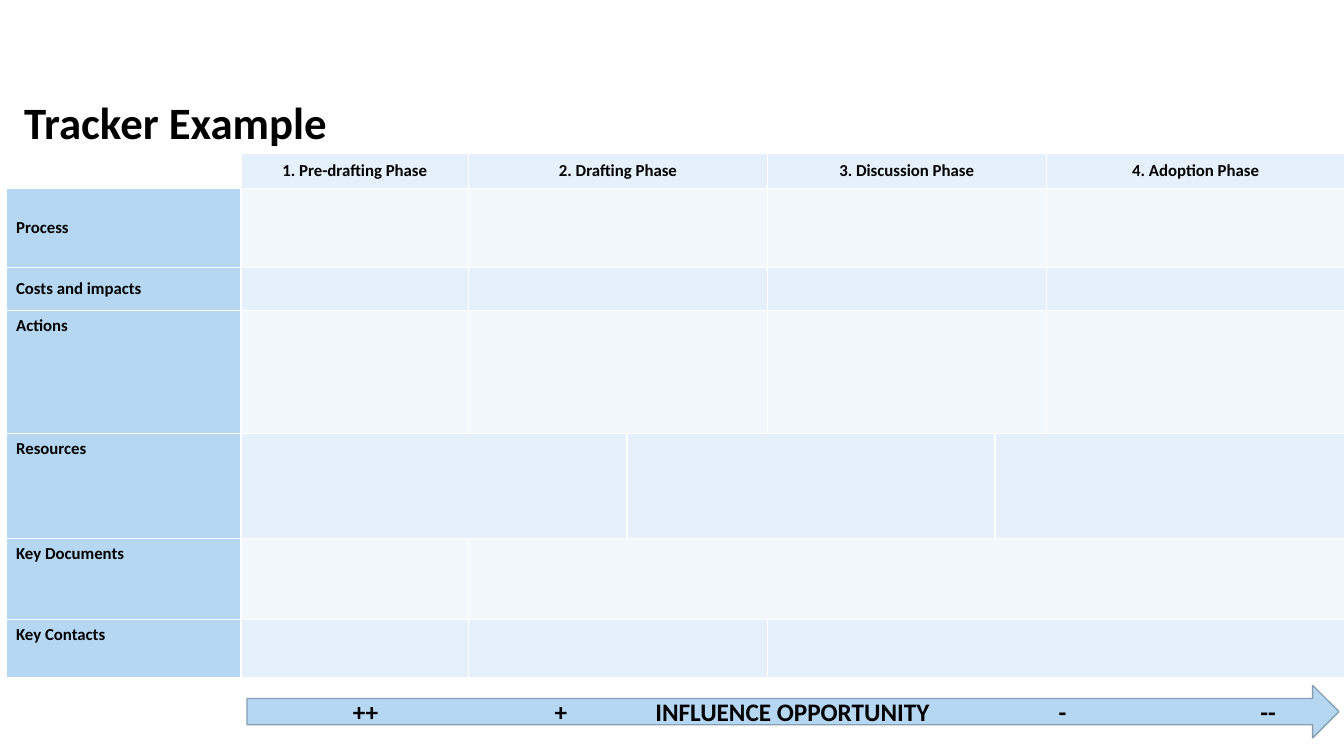
"""Build a tracker slide: a table of phases above an influence arrow."""
from lxml import etree
from pptx import Presentation
from pptx.dml.color import RGBColor
from pptx.enum.shapes import MSO_SHAPE
from pptx.enum.text import MSO_ANCHOR, MSO_AUTO_SIZE, PP_ALIGN
from pptx.oxml.ns import qn
from pptx.util import Inches, Pt

ARROW = MSO_SHAPE.RIGHT_ARROW
TOP, MIDDLE = MSO_ANCHOR.TOP, MSO_ANCHOR.MIDDLE
LEFT, CENTER = PP_ALIGN.LEFT, PP_ALIGN.CENTER
NO_FIT = MSO_AUTO_SIZE.NONE

COLORS = {
    "text": "000000",
    "border": "FFFFFF",
    "corner": "FFFFFF",
    "label": "B5D7F2",
    "dark band": "E5F0FA",
    "light band": "F3F8FC",
    "arrow edge": "869FB3",
}
COLUMN_WIDTHS = [2.33, 2.26, 1.57, 1.39, 2.26, 0.51, 2.96]
PHASE_SPANS = [(1, 1), (2, 3), (4, 5), (6, 6)]
PHASES = ["1. Pre-drafting Phase", "2. Drafting Phase",
          "3. Discussion Phase", "4. Adoption Phase"]
TRACKER_ROWS = [
    ("", 0.35, MIDDLE, PHASE_SPANS),
    ("Process", 0.78, MIDDLE, PHASE_SPANS),
    ("Costs and impacts", 0.43, MIDDLE, PHASE_SPANS),
    ("Actions", 1.22, TOP, PHASE_SPANS),
    ("Resources", 1.04, TOP, [(1, 2), (3, 4), (5, 6)]),
    ("Key Documents", 0.81, TOP, [(1, 1), (2, 6)]),
    ("Key Contacts", 0.57, TOP, [(1, 1), (2, 3), (4, 6)]),
]
INFLUENCE_LEVELS = {1: "++", 3: "+", 4: "INFLUENCE OPPORTUNITY", 8: "-", 10: "--"}


def color(name):
    return RGBColor.from_string(COLORS[name])


def format_text(paragraph, size):
    for run in paragraph.runs:
        run.font.name = "Calibri"
        run.font.size = Pt(size)
        run.font.bold = True
        run.font.color.rgb = color("text")


prs = Presentation()
prs.slide_width, prs.slide_height = Inches(13.33), Inches(7.5)
slide = prs.slides.add_slide(prs.slide_layouts[5])

tracker_frame = slide.shapes.add_table(
    len(TRACKER_ROWS), len(COLUMN_WIDTHS), Inches(0.06), Inches(1.52),
    Inches(sum(COLUMN_WIDTHS)), Inches(sum(row[1] for row in TRACKER_ROWS)))
tracker = tracker_frame.table
tracker.first_row = tracker.horz_banding = False
for column, width in zip(tracker.columns, COLUMN_WIDTHS):
    column.width = Inches(width)

for row, (label, height, anchor, spans) in enumerate(TRACKER_ROWS):
    tracker.rows[row].height = Inches(height)
    band = "light band" if row % 2 else "dark band"
    for col in range(len(COLUMN_WIDTHS)):
        cell = tracker.cell(row, col)
        cell.vertical_anchor = anchor
        for side in ("lnL", "lnR", "lnT", "lnB"):
            border = etree.SubElement(cell._tc.get_or_add_tcPr(), qn("a:" + side), w=str(Pt(1)))
            border_fill = etree.SubElement(border, qn("a:solidFill"))
            etree.SubElement(border_fill, qn("a:srgbClr"), val=COLORS["border"])
        cell.fill.solid()
        cell.fill.fore_color.rgb = color(band if col else "label" if row else "corner")
        entry = cell.text_frame.paragraphs[0]
        if col == 0 and label:
            entry.text = label
        elif row == 0 and col in dict(spans):
            entry.text = PHASES[list(dict(spans)).index(col)]
            entry.alignment = CENTER
        format_text(entry, 12)
        if not entry.runs:
            etree.SubElement(entry._p, qn("a:endParaRPr"), sz="1200")
    for first, last in spans:
        if last > first:
            tracker.cell(row, first).merge(tracker.cell(row, last))

influence_arrow = slide.shapes.add_shape(
    ARROW, Inches(2.45), Inches(6.8), Inches(10.83), Inches(0.52))
influence_arrow.shadow.inherit = False
influence_arrow.fill.solid()
influence_arrow.fill.fore_color.rgb = color("label")
influence_arrow.line.color.rgb = color("arrow edge")
influence_arrow.line.width = Pt(1)

influence_scale = slide.shapes.add_textbox(
    Inches(2.5), Inches(6.64), Inches(10.78), Inches(0.83)).text_frame
influence_scale.word_wrap = True
influence_scale.vertical_anchor = MIDDLE
influence_scale.margin_left = influence_scale.margin_right = 0
levels = influence_scale.paragraphs[0]
tab_stops = etree.SubElement(levels._p.get_or_add_pPr(), qn("a:tabLst"))
for stop in INFLUENCE_LEVELS:
    etree.SubElement(tab_stops, qn("a:tab"), pos=str(Inches(stop)), algn="l")
levels.text = "".join("\t" + level for level in INFLUENCE_LEVELS.values())
format_text(levels, 18)

title = slide.shapes.title
title.left, title.top = Inches(0.14), Inches(0.95)
title.width, title.height = Inches(11.5), Inches(0.66)
title.text_frame.text = "Tracker Example"
title.text_frame.auto_size = NO_FIT
title.text_frame.vertical_anchor = TOP
heading = title.text_frame.paragraphs[0]
heading.alignment = LEFT
heading.line_spacing = 0.9
format_text(heading, 32)

prs.save("out.pptx")
